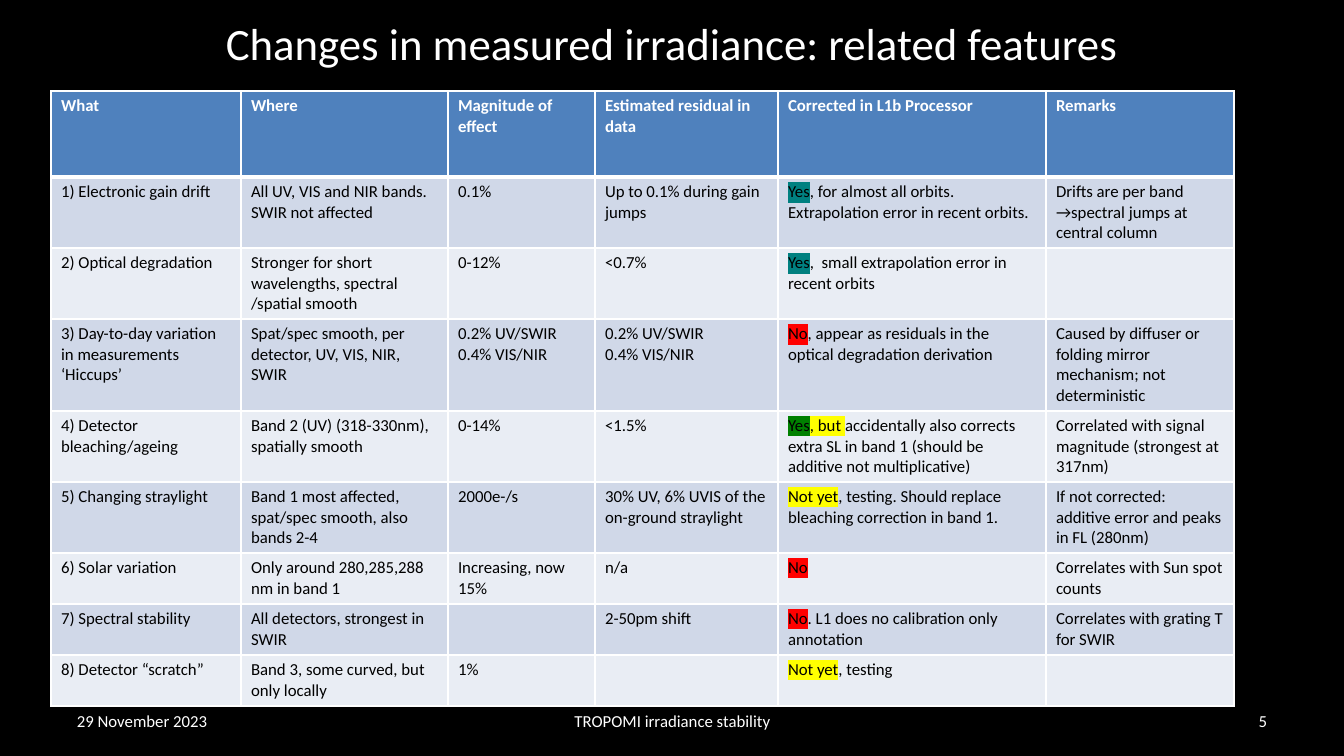
from dataclasses import dataclass

from lxml import etree
from pptx import Presentation
from pptx.dml.color import RGBColor
from pptx.enum.text import MSO_ANCHOR, PP_ALIGN
from pptx.oxml.ns import qn
from pptx.util import Emu, Pt

LEFT, CENTER, RIGHT = PP_ALIGN.LEFT, PP_ALIGN.CENTER, PP_ALIGN.RIGHT
MIDDLE = MSO_ANCHOR.MIDDLE


@dataclass(frozen=True)
class Theme:
    font: str = "Calibri"
    title_size: int = 32
    text_size: int = 12
    background: str = "000000"
    light: str = "FFFFFF"
    dark: str = "000000"
    header: str = "4F81BD"
    bands: tuple = ("D0D8E8", "E9EDF4")
    thin_border: int = 1
    thick_border: int = 3


THEME = Theme()
TEAL, GREEN, RED, YELLOW = "008080", "008000", "FF0000", "FFFF00"

SLIDE_WIDTH, SLIDE_HEIGHT = 1344, 756
SCALE = 12192000 / SLIDE_WIDTH

LABELS = [
    ("Changes in measured irradiance: related features", (67, 0, 1210, 85), CENTER, THEME.title_size),
    ("29 November 2023", (67, 701, 314, 40), LEFT, THEME.text_size),
    ("TROPOMI irradiance stability", (460, 701, 425, 40), CENTER, THEME.text_size),
    ("5", (963, 701, 314, 40), RIGHT, THEME.text_size),
]

TABLE_LEFT, TABLE_TOP = 51, 91
COLUMN_WIDTHS = [190, 207, 147, 183, 268, 188]
ROW_HEIGHTS = [86, 71, 71, 92, 71, 71, 51, 51, 51]

HEADINGS = ["What", "Where", "Magnitude of effect", "Estimated residual in data",
            "Corrected in L1b Processor", "Remarks"]
FEATURES = [
    ["1) Electronic gain drift", "All UV, VIS and NIR bands. SWIR not affected", "0.1%",
     "Up to 0.1% during gain jumps",
     [("Yes", TEAL), (", for almost all orbits. Extrapolation error in recent orbits.", None)],
     "Drifts are per band →spectral jumps at central column"],
    ["2) Optical degradation", "Stronger for short wavelengths, spectral /spatial smooth", "0-12%",
     "<0.7%",
     [("Yes", TEAL), (",  small extrapolation error in recent orbits", None)],
     ""],
    ["3) Day-to-day variation in measurements ‘Hiccups’",
     "Spat/spec smooth, per detector, UV, VIS, NIR, SWIR",
     "0.2% UV/SWIR\n0.4% VIS/NIR", "0.2% UV/SWIR\n0.4% VIS/NIR",
     [("No", RED), (", appear as residuals in the optical degradation derivation", None)],
     "Caused by diffuser or folding mirror mechanism; not deterministic"],
    ["4) Detector bleaching/ageing", "Band 2 (UV) (318-330nm), spatially smooth", "0-14%",
     "<1.5%",
     [("Yes", GREEN), (", but ", YELLOW),
      ("accidentally also corrects extra SL in band 1 (should be additive not multiplicative)", None)],
     "Correlated with signal magnitude (strongest at 317nm)"],
    ["5) Changing straylight", "Band 1 most affected, spat/spec smooth, also bands 2-4", "2000e-/s",
     "30% UV, 6% UVIS of the on-ground straylight",
     [("Not yet", YELLOW), (", testing. Should replace bleaching correction in band 1.", None)],
     "If not corrected: additive error and peaks in FL (280nm)"],
    ["6) Solar variation", "Only around 280,285,288 nm in band 1", "Increasing, now 15%",
     "n/a", [("No", RED)], "Correlates with Sun spot counts"],
    ["7) Spectral stability", "All detectors, strongest in SWIR", "",
     "2-50pm shift",
     [("No", RED), (". L1 does no calibration only annotation", None)],
     "Correlates with grating T for SWIR"],
    ["8) Detector “scratch”", "Band 3, some curved, but only locally", "1%",
     "", [("Not yet", YELLOW), (", testing", None)], ""],
]


def px(length):
    return Emu(round(length * SCALE))


def style_font(font, size, color, bold=False):
    font.name = THEME.font
    font.size = Pt(size)
    font.bold = bold
    font.color.rgb = RGBColor.from_string(color)


def add_color(parent, tag, color):
    holder = etree.SubElement(parent, qn(tag))
    etree.SubElement(holder, qn("a:srgbClr")).set("val", color)


def add_label(slide, text, box, alignment, size):
    frame = slide.shapes.add_textbox(*map(px, box)).text_frame
    frame.word_wrap = True
    frame.vertical_anchor = MIDDLE
    paragraph = frame.paragraphs[0]
    paragraph.text = text
    paragraph.alignment = alignment
    style_font(paragraph.font, size, THEME.light)


def set_borders(cell, row_index):
    properties = cell._tc.get_or_add_tcPr()
    top = THEME.thick_border if row_index == 1 else THEME.thin_border
    bottom = THEME.thick_border if row_index == 0 else THEME.thin_border
    widths = {"a:lnL": THEME.thin_border, "a:lnR": THEME.thin_border, "a:lnT": top, "a:lnB": bottom}
    for tag, width in widths.items():
        line = etree.SubElement(properties, qn(tag))
        line.set("w", str(Pt(width)))
        add_color(line, "a:solidFill", THEME.light)


def write_cell(cell, content, color, bold):
    frame = cell.text_frame
    if isinstance(content, str):
        frame.text = content
    else:
        for text, highlight in content:
            run = frame.paragraphs[0].add_run()
            run.text = text
            if highlight:
                add_color(run._r.get_or_add_rPr(), "a:highlight", highlight)
    for paragraph in frame.paragraphs:
        style_font(paragraph.font, THEME.text_size, color, bold)


def add_feature_table(slide):
    rows = [HEADINGS] + FEATURES
    box = (TABLE_LEFT, TABLE_TOP, sum(COLUMN_WIDTHS), sum(ROW_HEIGHTS))
    table = slide.shapes.add_table(len(rows), len(HEADINGS), *map(px, box)).table
    for column, width in zip(table.columns, COLUMN_WIDTHS):
        column.width = px(width)
    for row_index, (contents, height) in enumerate(zip(rows, ROW_HEIGHTS)):
        table.rows[row_index].height = px(height)
        is_header = row_index == 0
        fill = THEME.header if is_header else THEME.bands[(row_index - 1) % 2]
        color = THEME.light if is_header else THEME.dark
        for column_index, content in enumerate(contents):
            cell = table.cell(row_index, column_index)
            set_borders(cell, row_index)
            cell.fill.solid()
            cell.fill.fore_color.rgb = RGBColor.from_string(fill)
            write_cell(cell, content, color, is_header)


def main():
    presentation = Presentation()
    presentation.slide_width, presentation.slide_height = px(SLIDE_WIDTH), px(SLIDE_HEIGHT)
    slide = presentation.slides.add_slide(presentation.slide_layouts[6])
    slide.background.fill.solid()
    slide.background.fill.fore_color.rgb = RGBColor.from_string(THEME.background)
    for label in LABELS:
        add_label(slide, *label)
    add_feature_table(slide)
    presentation.save("out.pptx")


if __name__ == "__main__":
    main()
